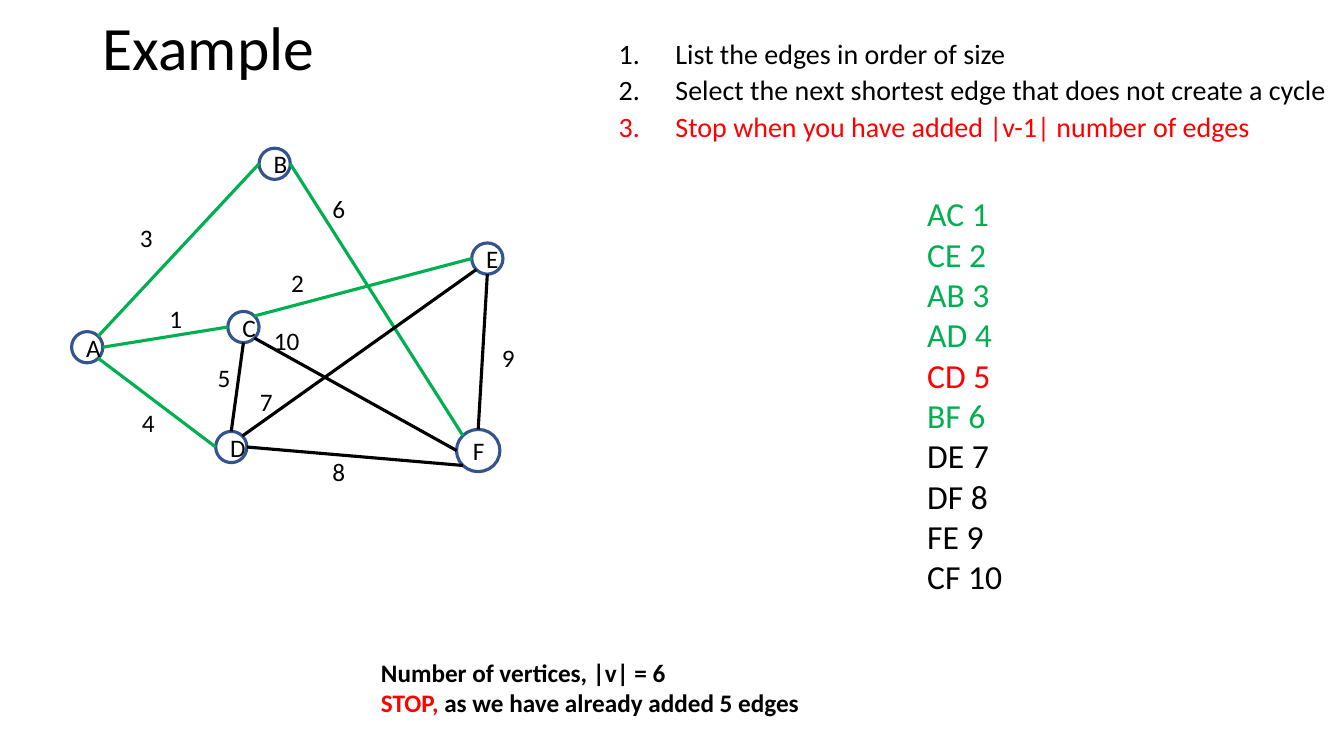
"""Build the slide that ends a run of Kruskal's algorithm on a six-vertex graph."""
from dataclasses import dataclass
from math import cos, radians, sin

from lxml.etree import SubElement
from pptx import Presentation
from pptx.dml.color import RGBColor
from pptx.enum.shapes import MSO_CONNECTOR, MSO_SHAPE
from pptx.enum.text import MSO_ANCHOR, MSO_AUTO_SIZE, PP_ALIGN
from pptx.oxml.ns import qn
from pptx.util import Pt

FONT = "Calibri"
BLACK, WHITE, GREEN, RED, NAVY = "000000", "FFFFFF", "00B050", "FF0000", "325491"
STROKE = 2.25
RIGHT, BOTTOM_RIGHT, BOTTOM, BOTTOM_LEFT, LEFT, TOP_LEFT, TOP, TOP_RIGHT = range(0, 360, 45)


@dataclass
class Vertex:
    x: float
    y: float
    width: float = 22.3
    height: float = 22.3

    def rim(self, angle: int) -> tuple:
        return (Pt(self.x + self.width / 2 * cos(radians(angle))),
                Pt(self.y + self.height / 2 * sin(radians(angle))))


@dataclass
class Edge:
    name: str
    weight: int
    start_angle: int
    end_angle: int
    label_x: float
    label_y: float
    line_colour: str = BLACK
    list_colour: str = BLACK
    label_width: float = 25.2


VERTICES = {
    "A": Vertex(62.3, 248),
    "B": Vertex(196.2, 117),
    "D": Vertex(165.2, 319.3),
    "F": Vertex(341.6, 321.8, 31, 30.2),
    "E": Vertex(348.1, 184.7),
    "C": Vertex(173.9, 233.6),
}
EDGES = [
    Edge("AC", 1, RIGHT, LEFT, 113.8, 213.1, GREEN, GREEN),
    Edge("CE", 2, TOP_RIGHT, LEFT, 200.9, 187.2, GREEN, GREEN),
    Edge("AB", 3, TOP_RIGHT, LEFT, 92.9, 155.5, GREEN, GREEN),
    Edge("AD", 4, BOTTOM_RIGHT, LEFT, 94.3, 287.3, GREEN, GREEN),
    Edge("CD", 5, BOTTOM, TOP, 148.3, 255.6, BLACK, RED),
    Edge("BF", 6, RIGHT, TOP_LEFT, 230.4, 134.6, GREEN, GREEN),
    Edge("DE", 7, TOP_RIGHT, BOTTOM_LEFT, 178.6, 272.2),
    Edge("DF", 8, RIGHT, BOTTOM_LEFT, 230.4, 322.6),
    Edge("FE", 9, TOP, BOTTOM, 351.4, 241.2),
    Edge("CF", 10, BOTTOM_RIGHT, LEFT, 188.6, 229, label_width=43.2),
]
STEPS = [
    ("List the edges in order of size", BLACK),
    ("Select the next shortest edge that does not create a cycle", BLACK),
    ("Stop when you have added |v-1| number of edges", RED),
]


def paint(target, colour: str) -> None:
    """Give a fill or line format one solid colour."""
    target.solid()
    target.fore_color.rgb = RGBColor.from_string(colour)


def add_span(para, text: str, *, size: float, colour: str = BLACK, bold: bool = False) -> None:
    """Append formatted text to a paragraph."""
    span = para.add_run()
    span.text = text
    span.font.name = FONT
    span.font.size = Pt(size)
    span.font.bold = bold
    span.font.color.rgb = RGBColor.from_string(colour)


def add_text(page, left: float, top: float, width: float, height: float, lines: list, *,
             size: float, bold: bool = False, wrap: bool = True, numbered: bool = False) -> None:
    """Add a text box; each line is a list of (text, colour) spans."""
    box = page.shapes.add_textbox(Pt(left), Pt(top), Pt(width), Pt(height))
    frame = box.text_frame
    frame.word_wrap = wrap
    frame.auto_size = MSO_AUTO_SIZE.SHAPE_TO_FIT_TEXT
    for index, spans in enumerate(lines):
        para = frame.add_paragraph() if index else frame.paragraphs[0]
        if numbered:
            number_paragraph(para)
            para.space_before = Pt(2 if index else 0)
        for text, colour in spans:
            add_span(para, text, size=size, colour=colour, bold=bold)


def number_paragraph(para) -> None:
    """Turn on automatic numbering with a hanging indent."""
    properties = para._p.get_or_add_pPr()
    properties.set("marL", str(Pt(40.5)))
    properties.set("indent", str(-Pt(40.5)))
    SubElement(properties, qn("a:buFont"), typeface="+mj-lt")
    SubElement(properties, qn("a:buAutoNum"), type="arabicPeriod")


def add_vertex(page, name: str, vertex: Vertex) -> None:
    """Draw a named circle for one vertex."""
    circle = page.shapes.add_shape(
        MSO_SHAPE.OVAL, Pt(vertex.x - vertex.width / 2), Pt(vertex.y - vertex.height / 2),
        Pt(vertex.width), Pt(vertex.height))
    circle.shadow.inherit = False
    paint(circle.fill, WHITE)
    paint(circle.line.fill, NAVY)
    circle.line.width = Pt(STROKE)
    circle.text_frame.vertical_anchor = MSO_ANCHOR.MIDDLE
    para = circle.text_frame.paragraphs[0]
    para.alignment = PP_ALIGN.CENTER
    add_span(para, name, size=18)


def add_edge(page, edge: Edge) -> None:
    """Join the rims of the two vertices that name the edge."""
    start, end = (VERTICES[letter] for letter in edge.name)
    line = page.shapes.add_connector(
        MSO_CONNECTOR.STRAIGHT, *start.rim(edge.start_angle), *end.rim(edge.end_angle))
    paint(line.line.fill, edge.line_colour)
    line.line.width = Pt(STROKE)
    SubElement(line._element.spPr, qn("a:effectLst"))


def set_title(page, text: str) -> None:
    """Place and format the title placeholder."""
    title = page.shapes.title
    title.left, title.top, title.width, title.height = Pt(66.2), Pt(6.5), Pt(828), Pt(59)
    frame = title.text_frame
    frame.auto_size = MSO_AUTO_SIZE.NONE
    frame.vertical_anchor = MSO_ANCHOR.MIDDLE
    para = frame.paragraphs[0]
    para.alignment = PP_ALIGN.LEFT
    para.line_spacing = 0.9
    add_span(para, text, size=44)


def main() -> None:
    """Build and save the deck."""
    deck = Presentation()
    deck.slide_width, deck.slide_height = Pt(960), Pt(540)
    page = deck.slides.add_slide(deck.slide_layouts[5])
    set_title(page, "Example")
    for name, vertex in VERTICES.items():
        add_vertex(page, name, vertex)
    for edge in EDGES:
        add_edge(page, edge)
    for edge in EDGES:
        add_text(page, edge.label_x, edge.label_y, edge.label_width, 28.8,
                 [[(str(edge.weight), BLACK)]], size=18)
    add_text(page, 434.9, 22.3, 741.6, 84.2, [[step] for step in STEPS], size=20, numbered=True)
    ranking = [[(f"{edge.name} {edge.weight}", edge.list_colour)] for edge in EDGES]
    add_text(page, 655.2, 134.6, 74.2, 298, ranking, size=24)
    add_text(page, 265, 465.8, 315.4, 51.1,
             [[("Number of vertices, |v| = 6", BLACK)],
              [("STOP, ", RED), ("as we have already added 5 edges", BLACK)]],
             size=18, bold=True, wrap=False)
    deck.save("out.pptx")


if __name__ == "__main__":
    main()
